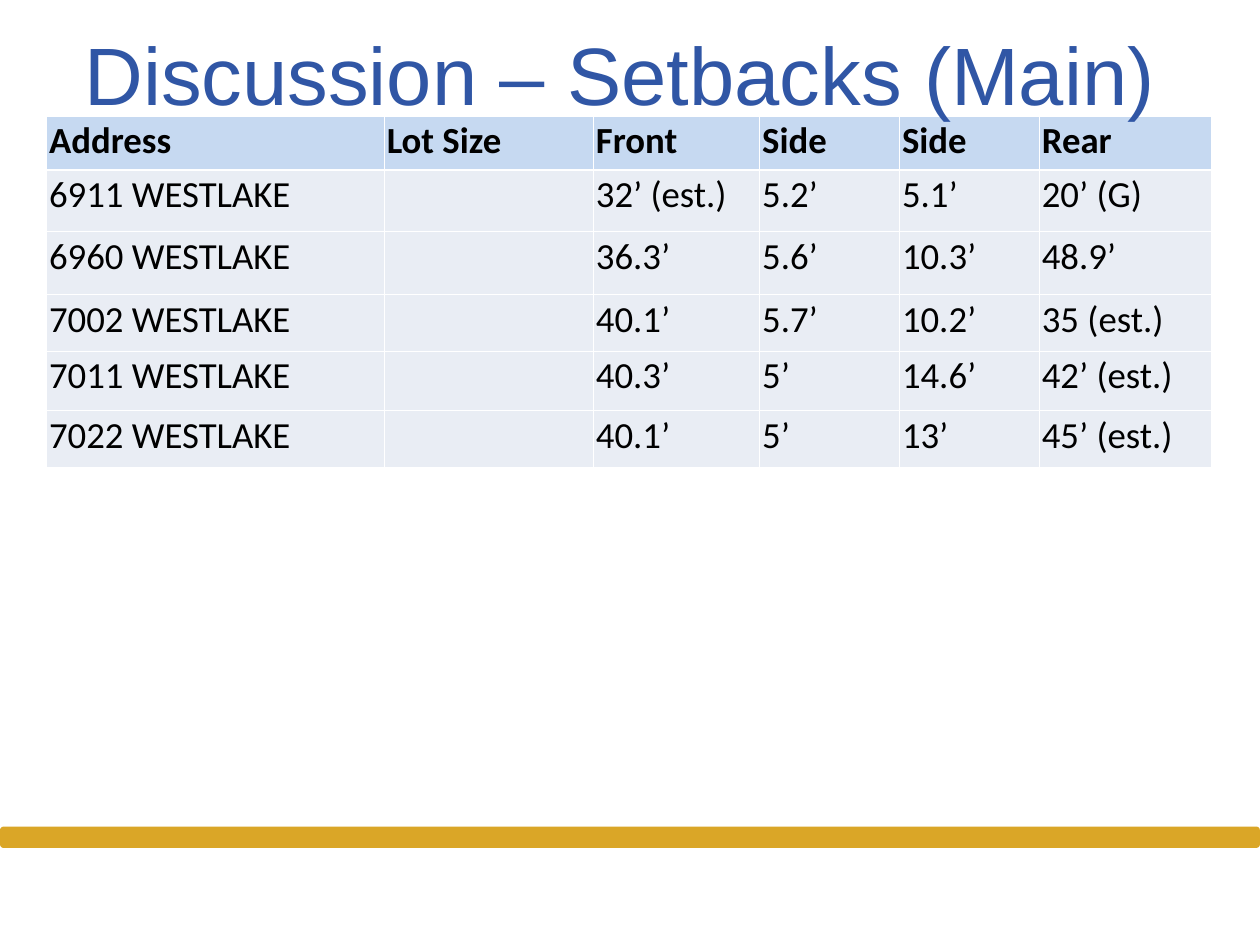
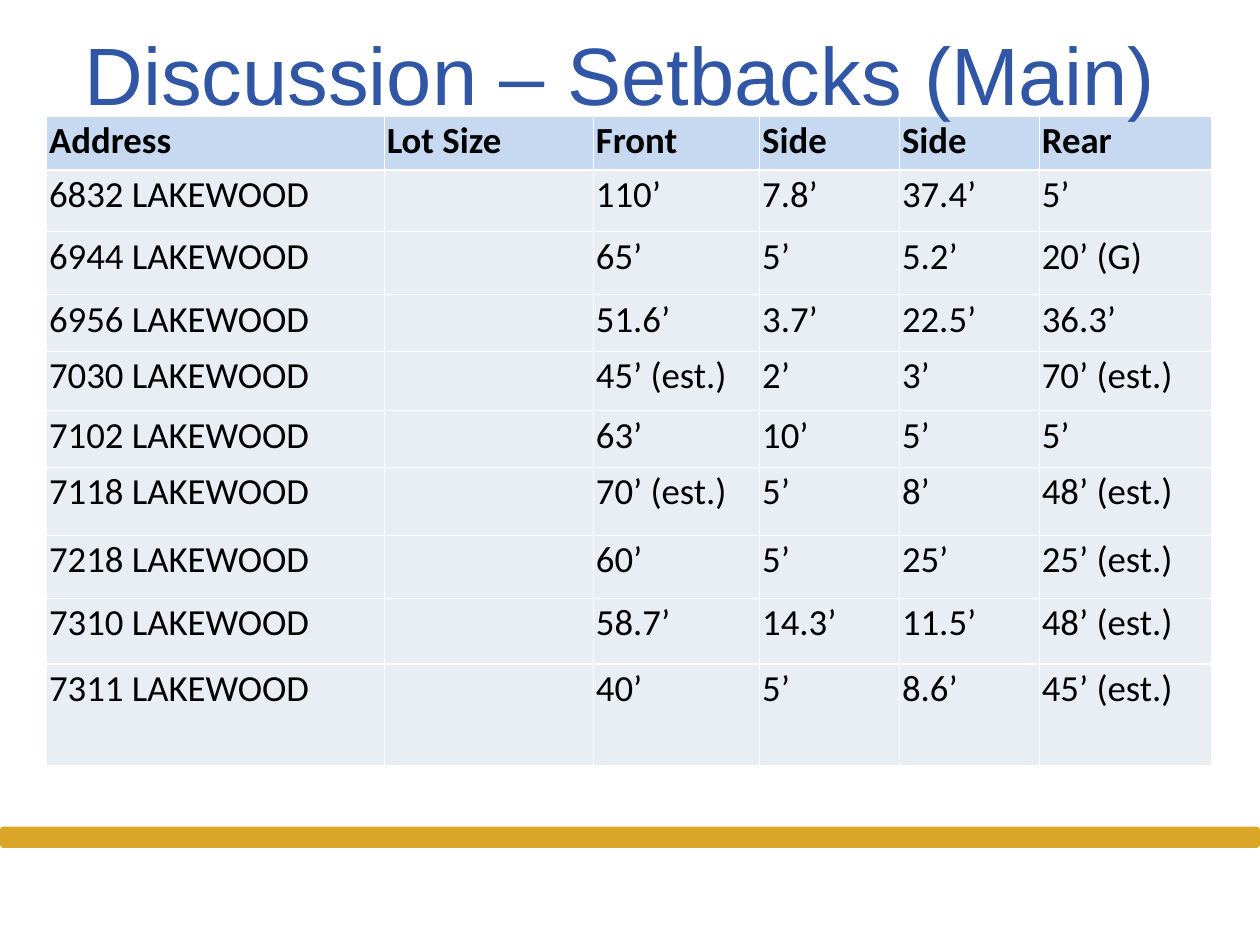
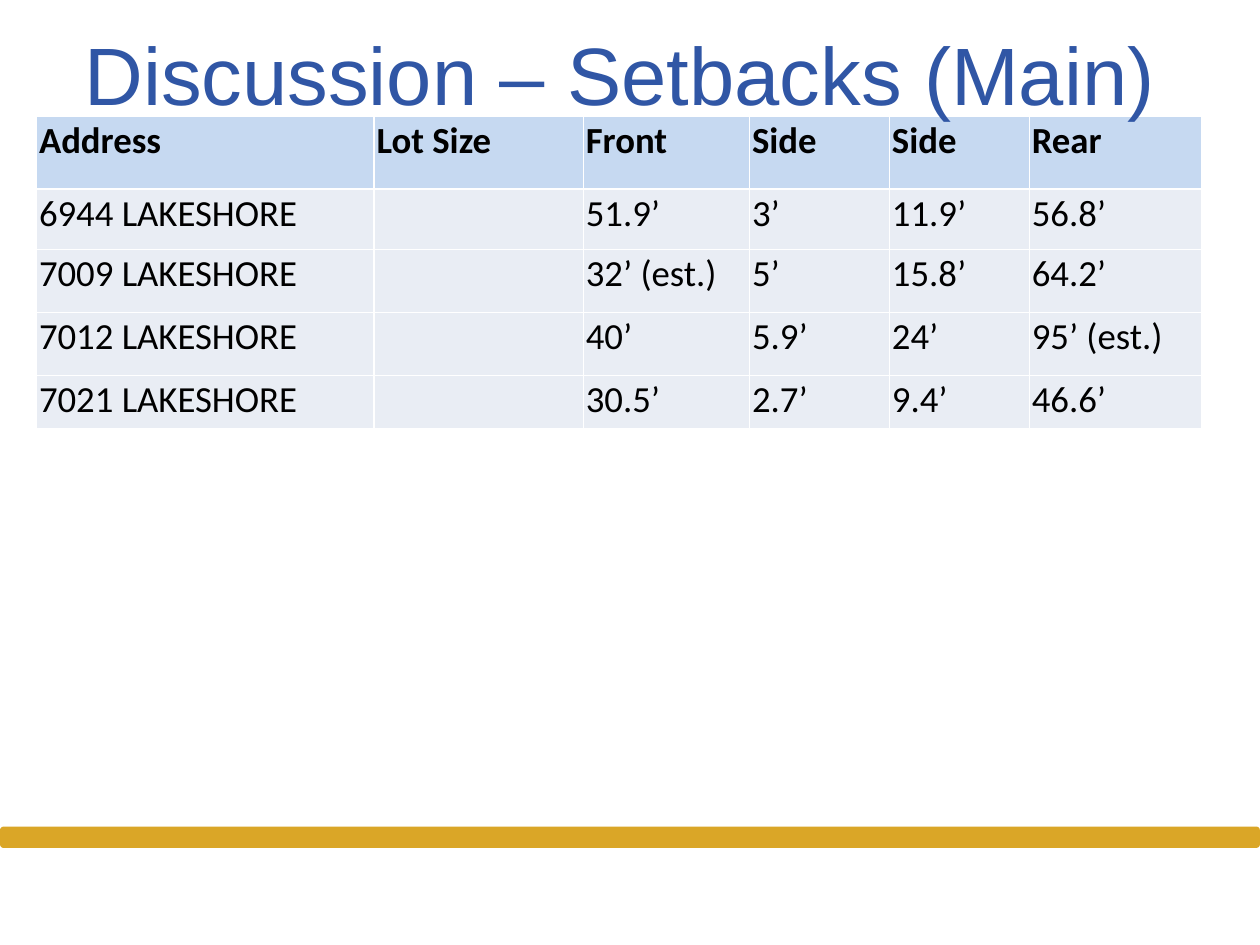
import pptx
import pptx.dml.color
import pptx.enum.shapes
import pptx.enum.text
import pptx.oxml
import pptx.oxml.ns
import pptx.util

RGB = pptx.dml.color.RGBColor.from_string
Pt = pptx.util.Pt

THEME = {
    "title": {"name": "Arial", "size": Pt(46.5), "bold": False, "color": "3056A5"},
    "header": {"name": "Calibri", "size": Pt(21), "bold": True, "color": "000000"},
    "body": {"name": "Calibri", "size": Pt(21), "bold": False, "color": "000000"},
    "band": "DAA627",
    "header_fill": "C6D9F1",
    "body_fill": "E9EDF4",
    "border": "FFFFFF",
}
TITLE = "Discussion – Setbacks (Main)"
HEADINGS = ["Address", "Lot Size", "Front", "Side", "Side", "Rear"]

prs = pptx.Presentation()
prs.slide_width = pptx.util.Inches(10)
prs.slide_height = pptx.util.Inches(7.5)

# The slide is a grid of 100 columns by 100 rows.
COL = prs.slide_width / 100
ROW = prs.slide_height / 100
TITLE_LEFT, TABLE_TOP, TABLE_WIDTH = 2.9, 12.27, 92.6
COLUMN_WIDTHS = [26.8, 16.6, 13.2, 11.1, 11.1, 13.7]
CELL_MARGINS = {"margin_left": 0.2, "margin_right": 0.2, "margin_top": 0.2, "margin_bottom": 0}

# Each lot: street number, front, side, side, rear. Lot sizes are left open.
STREETS = [
    {
        "name": "WESTLAKE",
        "left": 3.7,
        "row_heights": [5.73, 6.53, 6.67, 6, 6.27, 6],
        "lots": [
            ("6911", "32’ (est.)", "5.2’", "5.1’", "20’ (G)"),
            ("6960", "36.3’", "5.6’", "10.3’", "48.9’"),
            ("7002", "40.1’", "5.7’", "10.2’", "35 (est.)"),
            ("7011", "40.3’", "5’", "14.6’", "42’ (est.)"),
            ("7022", "40.1’", "5’", "13’", "45’ (est.)"),
        ],
    },
    {
        "name": "LAKEWOOD",
        "left": 3.7,
        "row_heights": [5.73, 6.53, 6.67, 6, 6.27, 6, 7.2, 6.67, 6.93, 10.8],
        "lots": [
            ("6832", "110’", "7.8’", "37.4’", "5’"),
            ("6944", "65’", "5’", "5.2’", "20’ (G)"),
            ("6956", "51.6’", "3.7’", "22.5’", "36.3’"),
            ("7030", "45’ (est.)", "2’", "3’", "70’ (est.)"),
            ("7102", "63’", "10’", "5’", "5’"),
            ("7118", "70’ (est.)", "5’", "8’", "48’ (est.)"),
            ("7218", "60’", "5’", "25’", "25’ (est.)"),
            ("7310", "58.7’", "14.3’", "11.5’", "48’ (est.)"),
            ("7311", "40’", "5’", "8.6’", "45’ (est.)"),
        ],
    },
    {
        "name": "LAKESHORE",
        "left": 2.9,
        "row_heights": [7.73, 6.4, 6.67, 6.67, 5.6],
        "lots": [
            ("6944", "51.9’", "3’", "11.9’", "56.8’"),
            ("7009", "32’ (est.)", "5’", "15.8’", "64.2’"),
            ("7012", "40’", "5.9’", "24’", "95’ (est.)"),
            ("7021", "30.5’", "2.7’", "9.4’", "46.6’"),
        ],
    },
]


def grid_box(left, top, width, height):
    """Turn grid columns and rows into slide lengths."""
    return int(left * COL), int(top * ROW), int(width * COL), int(height * ROW)


def write(p, text, style):
    r = p.add_run()
    r.text = text
    for name in ("name", "size", "bold"):
        setattr(r.font, name, THEME[style][name])
    r.font.color.rgb = RGB(THEME[style]["color"])


for street in STREETS:
    s = prs.slides.add_slide(prs.slide_layouts[6])

    band = s.shapes.add_shape(pptx.enum.shapes.MSO_SHAPE.ROUNDED_RECTANGLE,
                              *grid_box(0, 87.47, 100, 2.27))
    band.shadow.inherit = False
    band.fill.solid()
    band.fill.fore_color.rgb = RGB(THEME["band"])
    band.line.fill.background()

    rows = [HEADINGS]
    for number, *setbacks in street["lots"]:
        rows.append([f"{number} {street['name']}", "", *setbacks])
    heights = street["row_heights"]
    table = s.shapes.add_table(
        len(rows), len(HEADINGS),
        *grid_box(street["left"], TABLE_TOP, TABLE_WIDTH, sum(heights))).table
    table.horz_banding = False
    for column, width in zip(table.columns, COLUMN_WIDTHS):
        column.width = int(width * COL)
    for i, (values, height) in enumerate(zip(rows, heights)):
        table.rows[i].height = int(height * ROW)
        style = "body" if i else "header"
        for j, value in enumerate(values):
            cell = table.cell(i, j)
            for name, margin in CELL_MARGINS.items():
                setattr(cell, name, int(margin * COL))
            for side in "LRTB":
                cell._tc.get_or_add_tcPr().append(pptx.oxml.parse_xml(
                    f'<a:ln{side} {pptx.oxml.ns.nsdecls("a")} w="{Pt(1)}"><a:solidFill>'
                    f'<a:srgbClr val="{THEME["border"]}"/></a:solidFill></a:ln{side}>'))
            cell.fill.solid()
            cell.fill.fore_color.rgb = RGB(THEME[style + "_fill"])
            if value:
                write(cell.text_frame.paragraphs[0], value, style)

    tf = s.shapes.add_textbox(*grid_box(TITLE_LEFT, 1.07, TABLE_WIDTH, 13.33)).text_frame
    tf.word_wrap = True
    tf.vertical_anchor = pptx.enum.text.MSO_ANCHOR.MIDDLE
    p = tf.paragraphs[0]
    p.alignment = pptx.enum.text.PP_ALIGN.CENTER
    write(p, TITLE, "title")

prs.save("out.pptx")
